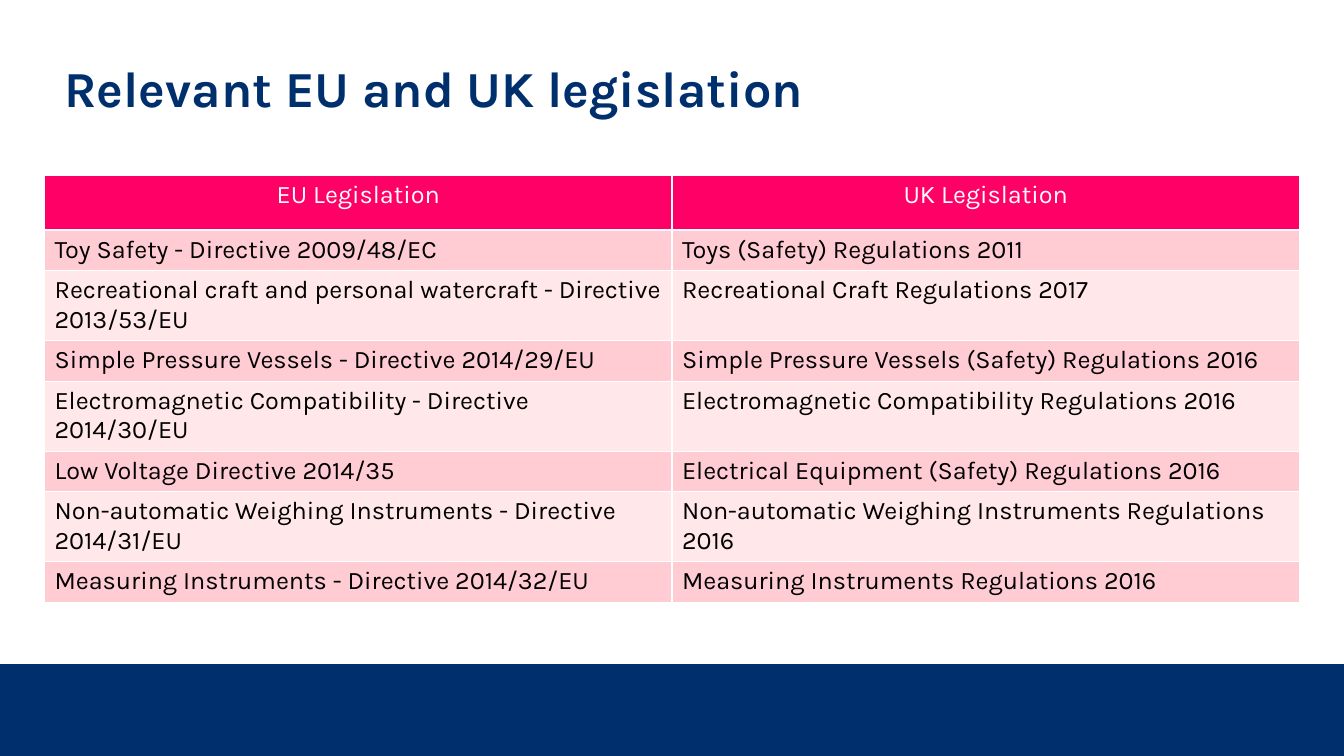
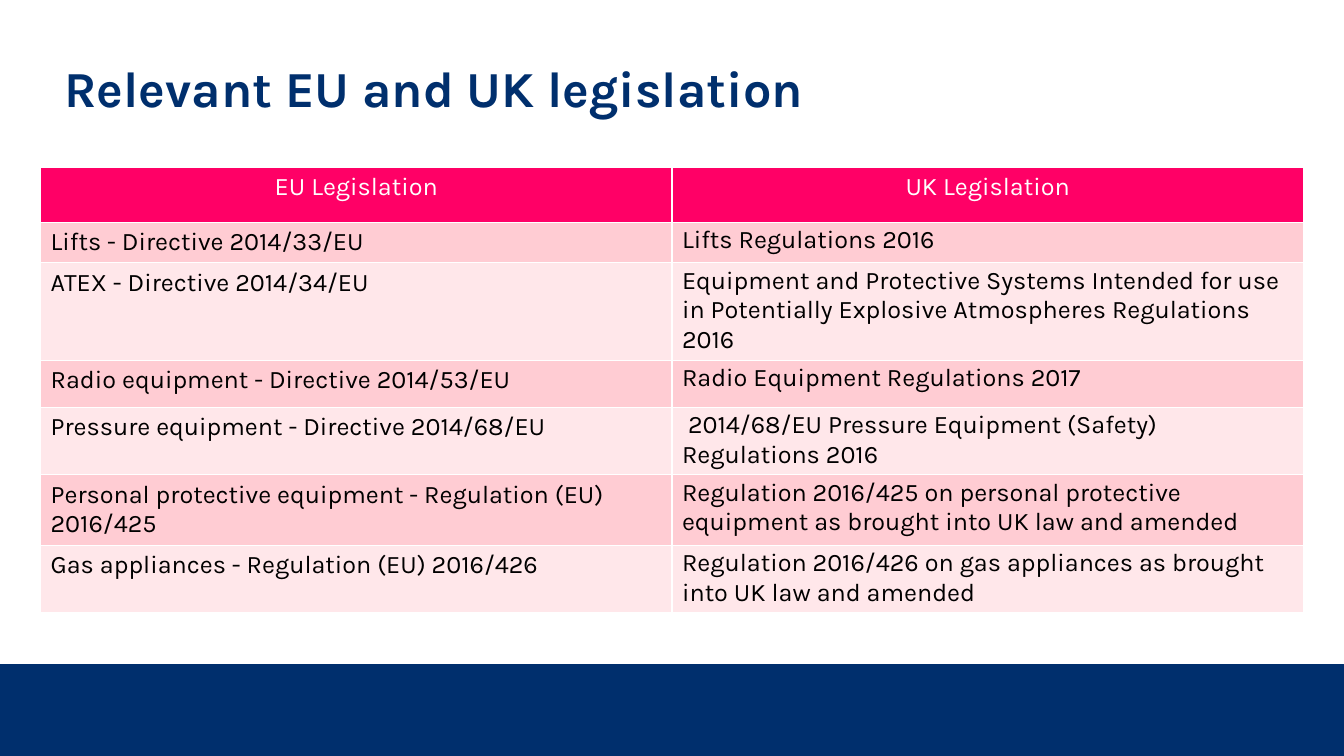
from pptx import Presentation
from pptx.util import Pt
from pptx.dml.color import RGBColor as RGB
from pptx.enum.shapes import MSO_SHAPE as Shape
from pptx.enum.text import MSO_AUTO_SIZE as Fit, PP_ALIGN as Align
from pptx.oxml.ns import qn
from lxml.etree import SubElement as Sub

# Content: one dict per slide, each row is (height, EU text, UK text)
TITLE = "Relevant EU and UK legislation"
HEAD = ("EU Legislation", "UK Legislation")
ONE, TWO = 29, 50  # heights of rows with one and two lines
PAGES = [
    {"left": 31.8, "top": 125.4, "head": 38.9, "pad": 3.6, "rows": [
        (ONE, "Toy Safety - Directive 2009/48/EC",
         "Toys (Safety) Regulations 2011"),
        (TWO, "Recreational craft and personal watercraft - Directive 2013/53/EU",
         "Recreational Craft Regulations 2017"),
        (ONE, "Simple Pressure Vessels - Directive 2014/29/EU",
         "Simple Pressure Vessels (Safety) Regulations 2016"),
        (TWO, "Electromagnetic Compatibility - Directive 2014/30/EU",
         "Electromagnetic Compatibility Regulations 2016"),
        (ONE, "Low Voltage Directive 2014/35",
         "Electrical Equipment (Safety) Regulations 2016"),
        (TWO, "Non-automatic Weighing Instruments - Directive 2014/31/EU",
         "Non-automatic Weighing Instruments Regulations 2016"),
        (ONE, "Measuring Instruments - Directive 2014/32/EU",
         "Measuring Instruments Regulations 2016"),
    ]},
    {"left": 29, "top": 119.6, "head": 39.3, "pad": 2.2, "rows": [
        (28.8, "Lifts - Directive 2014/33/EU", "Lifts Regulations 2016"),
        (69.7, "ATEX - Directive 2014/34/EU",
         "Equipment and Protective Systems Intended for use in Potentially "
         "Explosive Atmospheres Regulations 2016"),
        (33.6, "Radio equipment - Directive 2014/53/EU",
         "Radio Equipment Regulations 2017"),
        (48.2, "Pressure equipment - Directive 2014/68/EU",
         " 2014/68/EU Pressure Equipment (Safety) Regulations 2016"),
        (50.2, "Personal protective equipment - Regulation (EU) 2016/425",
         "Regulation 2016/425 on personal protective equipment "
         "as brought into UK law and amended"),
        (48.2, "Gas appliances - Regulation (EU) 2016/426",
         "Regulation 2016/426 on gas appliances "
         "as brought into UK law and amended"),
    ]},
]

# Shared style
WIDE, HIGH = 960, 540
FONT = "Karla"
HEX = {"navy": "002F6D", "pink": "FF0066", "rose": "FFCCD3",
       "blush": "FFE7EA", "white": "FFFFFF", "black": "000000"}


def tint(name):
    return RGB.from_string(HEX[name])


def write(frame, text, size, color, bold=False, align=Align.LEFT):
    para = frame.paragraphs[0]
    para.alignment = align
    run = para.add_run()
    run.text = text
    font = run.font
    font.name, font.size, font.bold = FONT, Pt(size), bold
    font.color.rgb = tint(color)


def edge(cell):
    props = cell._tc.get_or_add_tcPr()
    for side in "LRTB":
        line = Sub(props, qn("a:ln" + side), w=str(Pt(1)))
        Sub(Sub(line, qn("a:solidFill")), qn("a:srgbClr"), val=HEX["white"])


def add_band(slide):
    band = slide.shapes.add_shape(
        Shape.RECTANGLE, Pt(0), Pt(474.5), Pt(WIDE), Pt(HIGH - 474.5))
    band.shadow.inherit = False
    band.fill.solid()
    band.fill.fore_color.rgb = tint("navy")
    band.line.color.rgb = tint("navy")
    band.line.width = Pt(0.75)


def add_title(slide):
    box = slide.shapes.add_textbox(Pt(39), Pt(37.4), Pt(716), Pt(51))
    frame = box.text_frame
    frame.word_wrap = True
    frame.auto_size = Fit.SHAPE_TO_FIT_TEXT
    write(frame, TITLE, 36, "navy", bold=True)


def add_grid(slide, page):
    rows = [(page["head"], *HEAD), *page["rows"]]
    width = WIDE - 2 * page["left"]
    grid = slide.shapes.add_table(
        len(rows), 2, Pt(page["left"]), Pt(page["top"]),
        Pt(width), Pt(sum(row[0] for row in rows))).table
    grid.first_row = grid.horz_banding = False
    for col in grid.columns:
        col.width = Pt(width / 2)
    for r, (height, *texts) in enumerate(rows):
        grid.rows[r].height = Pt(height)
        top = r == 0
        shade = "pink" if top else "rose" if r % 2 else "blush"
        for c, text in enumerate(texts):
            cell = grid.cell(r, c)
            edge(cell)
            cell.fill.solid()
            cell.fill.fore_color.rgb = tint(shade)
            if c and not top:
                cell.margin_top = cell.margin_bottom = Pt(page["pad"])
            write(cell.text_frame, text, 18, "white" if top else "black",
                  align=Align.CENTER if top else Align.LEFT)


def main():
    deck = Presentation()
    deck.slide_width, deck.slide_height = Pt(WIDE), Pt(HIGH)
    for page in PAGES:
        slide = deck.slides.add_slide(deck.slide_layouts[6])
        add_band(slide)
        add_grid(slide, page)
        add_title(slide)
    deck.save("out.pptx")


if __name__ == "__main__":
    main()
